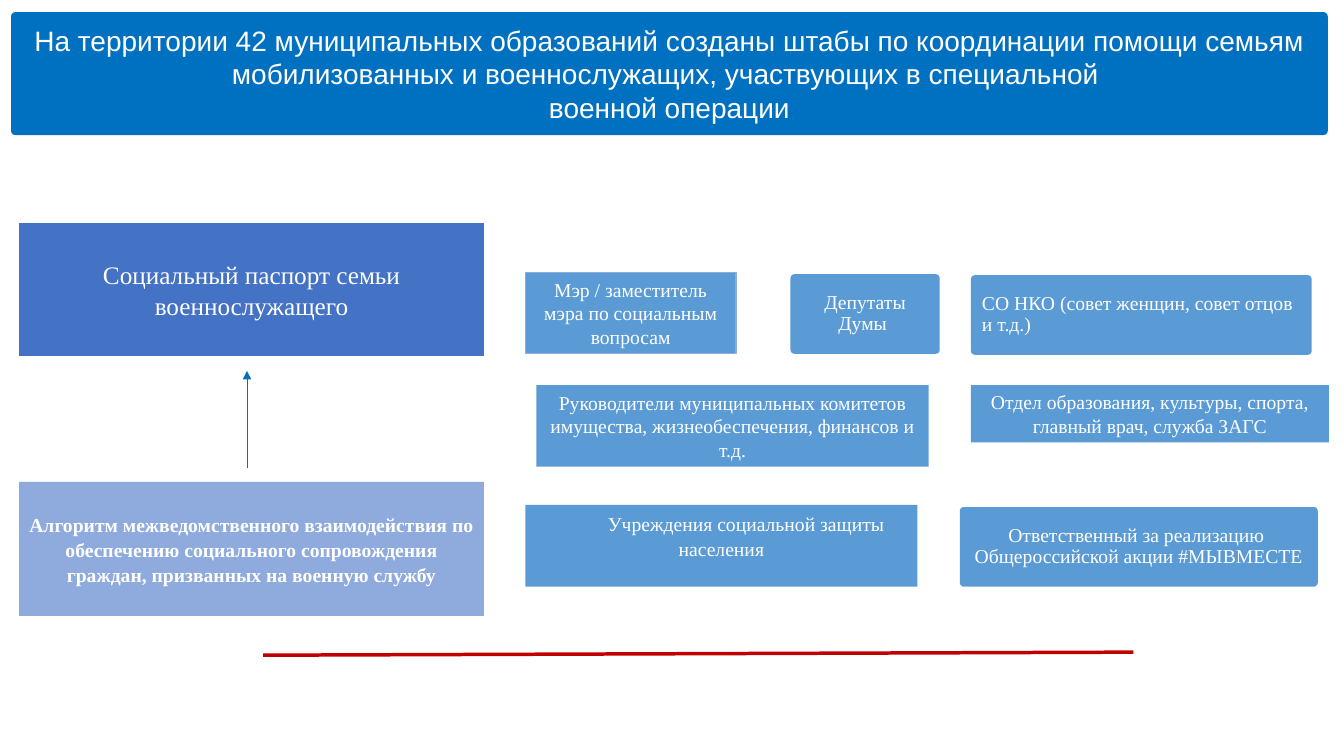
import pptx
import pptx.util
import pptx.dml.color
import pptx.enum.shapes
import pptx.enum.text
import pptx.oxml
import pptx.oxml.ns

Inches = pptx.util.Inches
Pt = pptx.util.Pt
SHAPE = pptx.enum.shapes.MSO_SHAPE
ALIGN = pptx.enum.text.PP_ALIGN
ANCHOR = pptx.enum.text.MSO_ANCHOR

COLORS = {
    "banner": "0070C0",
    "passport": "4472C4",
    "algorithm": "8FAADC",
    "member": "5B9BD5",
    "rule": "C00000",
    "text": "FFFFFF",
}


def rgb(name):
    return pptx.dml.color.RGBColor.from_string(COLORS[name])


def add_box(page, place, paragraphs, fill="member", outline=None, rounding=None,
            size=14, font="Times New Roman", bold=False, align=ALIGN.CENTER,
            anchor=ANCHOR.MIDDLE, spacing=1.0, indent=0):
    """Add a filled box with text; a rounding value gives it round corners."""
    kind = SHAPE.RECTANGLE if rounding is None else SHAPE.ROUNDED_RECTANGLE
    box = page.shapes.add_shape(kind, *map(Inches, place))
    box.shadow.inherit = False
    if rounding is not None:
        box.adjustments[0] = rounding
    box.fill.solid()
    box.fill.fore_color.rgb = rgb(fill)
    if outline:
        box.line.color.rgb = rgb(outline)
        box.line.width = Pt(0.75)
    else:
        box.line.fill.background()

    frame = box.text_frame
    frame.word_wrap = True
    frame.vertical_anchor = anchor
    for number, text in enumerate(paragraphs):
        para = frame.add_paragraph() if number else frame.paragraphs[0]
        para.alignment = align
        para.line_spacing = spacing
        if indent:
            properties = para._p.get_or_add_pPr()
            properties.set("marL", "0")
            properties.set("indent", str(Inches(indent)))
        span = para.add_run()
        span.text = text
        span.font.name = font
        span.font.size = Pt(size)
        span.font.bold = bold
        span.font.color.rgb = rgb("text")
    return box


def add_line(page, start, end, color, width, arrow=False):
    line = page.shapes.add_connector(
        pptx.enum.shapes.MSO_CONNECTOR.STRAIGHT, *map(Inches, start + end))
    line.line.color.rgb = rgb(color)
    line.line.width = Pt(width)
    if arrow:
        head = pptx.oxml.parse_xml(
            "<a:tailEnd %s type='triangle'/>" % pptx.oxml.ns.nsdecls("a"))
        line.line._get_or_add_ln().append(head)
    line._element.spPr.append(pptx.oxml.parse_xml(
        "<a:effectLst %s/>" % pptx.oxml.ns.nsdecls("a")))


def add_member(page, place, *paragraphs, **style):
    add_box(page, place, paragraphs, **style)


def add_round_member(page, place, *paragraphs, **style):
    add_box(page, place, paragraphs, rounding=0.049, spacing=0.9, **style)


def main():
    deck = pptx.Presentation()
    deck.slide_width = Inches(13.33)
    deck.slide_height = Inches(7.5)
    page = deck.slides.add_slide(deck.slide_layouts[6])

    # Title banner
    add_box(page, (0.11, 0.12, 13.06, 1.22), [
        "На территории 42 муниципальных образований созданы штабы по координации "
        "помощи семьям мобилизованных и военнослужащих, участвующих в специальной ",
        "военной операции",
    ], fill="banner", rounding=0.035, size=20, font="Arial")

    # Algorithm leading to the family passport
    add_box(page, (0.19, 2.22, 4.61, 1.31),
            ["Социальный паспорт семьи военнослужащего"],
            fill="passport", outline="passport", size=18)
    add_box(page, (0.19, 4.78, 4.61, 1.33), [
        "Алгоритм межведомственного взаимодействия по обеспечению социального "
        "сопровождения граждан, призванных на военную службу",
    ], fill="algorithm", bold=True, spacing=1.07)
    add_line(page, (2.45, 4.64), (2.45, 3.68), "banner", 0.5, arrow=True)

    # Members of the headquarters, row by row
    add_member(page, (5.21, 2.7, 2.09, 0.81),
               "Мэр / заместитель мэра по социальным вопросам", outline="algorithm")
    add_round_member(page, (7.84, 2.72, 1.48, 0.79), "Депутаты Думы ")
    add_round_member(page, (9.63, 2.73, 3.38, 0.79),
                     "СО НКО (совет женщин, совет отцов и т.д.)", align=ALIGN.LEFT)

    add_member(page, (5.32, 3.82, 3.89, 0.81),
               "Руководители муниципальных комитетов имущества, "
               "жизнеобеспечения, финансов и т.д.")
    add_member(page, (9.63, 3.82, 3.55, 0.57),
               "Отдел образования, культуры, спорта, главный врач, служба ЗАГС")

    add_member(page, (5.21, 5.01, 3.89, 0.81),
               "Учреждения социальной защиты населения",
               anchor=ANCHOR.TOP, spacing=1.07, indent=0.49)
    add_round_member(page, (9.52, 5.03, 3.55, 0.79),
                     "Ответственный за реализацию ",
                     "Общероссийской акции #МЫВМЕСТЕ")

    # Closing rule
    add_line(page, (2.61, 6.5), (11.24, 6.47), "rule", 2.5)

    deck.save("out.pptx")


if __name__ == "__main__":
    main()
